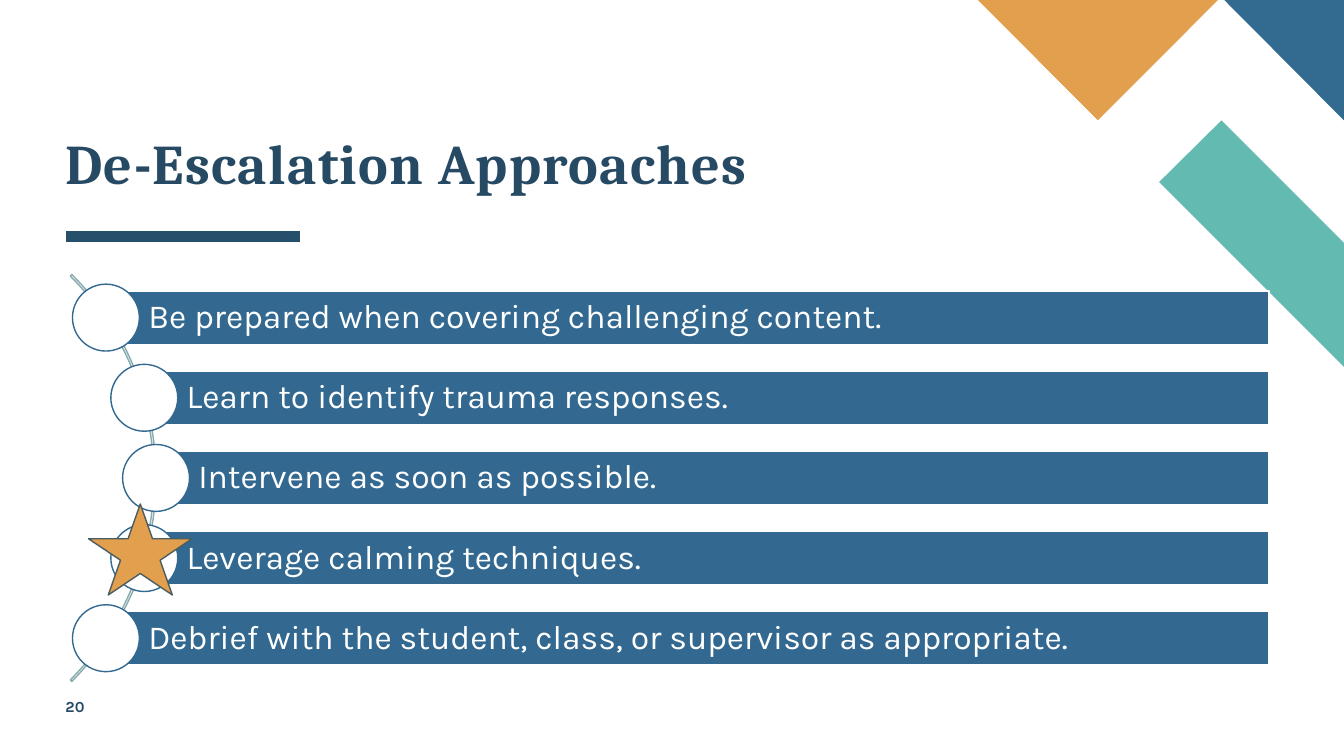
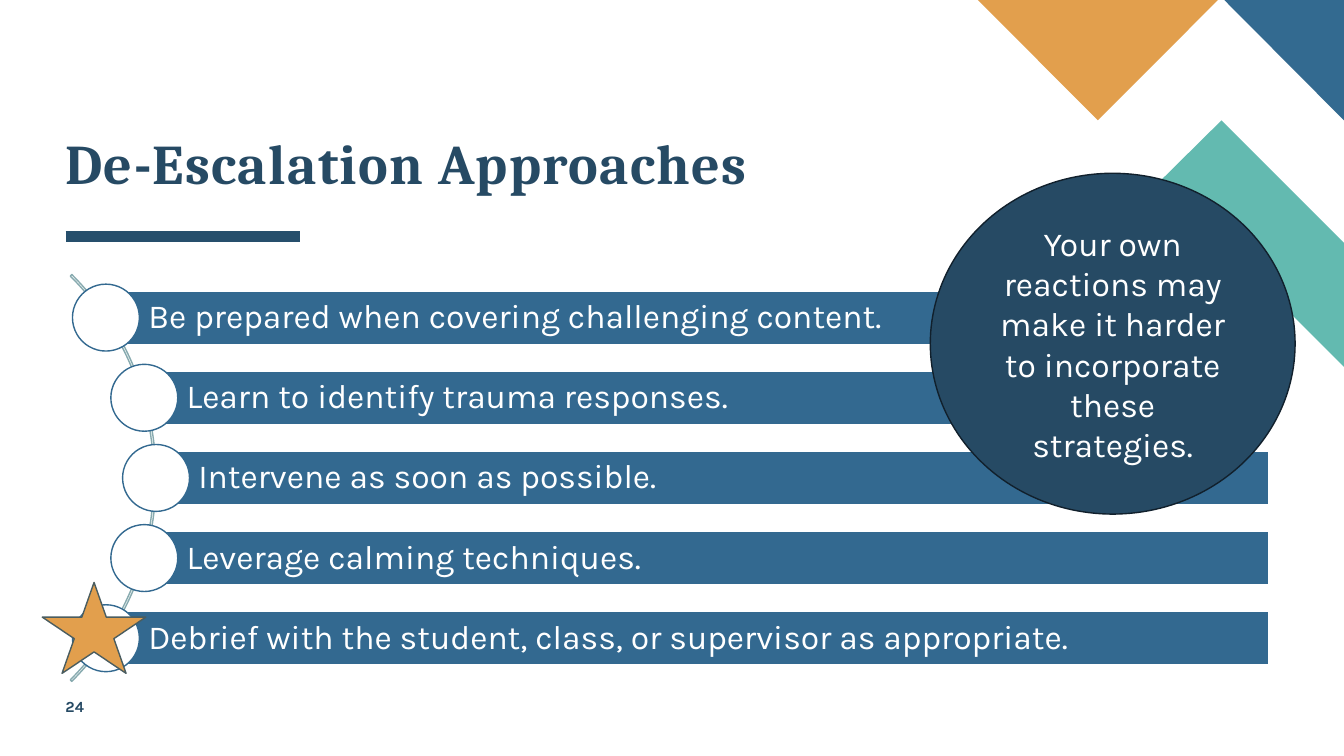
from lxml import etree
from pptx import Presentation
from pptx.dml.color import RGBColor
from pptx.enum.shapes import MSO_CONNECTOR, MSO_SHAPE
from pptx.enum.text import MSO_ANCHOR, MSO_AUTO_SIZE, PP_ALIGN
from pptx.oxml.ns import qn
from pptx.util import Pt

RECTANGLE, OVAL = MSO_SHAPE.RECTANGLE, MSO_SHAPE.OVAL
STAR, BLOCK_ARC = MSO_SHAPE.STAR_5_POINT, MSO_SHAPE.BLOCK_ARC
STRAIGHT = MSO_CONNECTOR.STRAIGHT
MIDDLE, BOTTOM = MSO_ANCHOR.MIDDLE, MSO_ANCHOR.BOTTOM
LEFT, CENTER = PP_ALIGN.LEFT, PP_ALIGN.CENTER

WHITE = RGBColor(0xFF, 0xFF, 0xFF)
NAVY = RGBColor(0x26, 0x4A, 0x64)
RULE_NAVY = RGBColor(0x26, 0x4F, 0x6C)
CALLOUT_EDGE = RGBColor(0x11, 0x20, 0x2C)
CORNER_BLUE = RGBColor(0x33, 0x6A, 0x90)
BAR_BLUE = RGBColor(0x33, 0x69, 0x90)
TEAL = RGBColor(0x63, 0xBA, 0xB0)
ORANGE = RGBColor(0xE2, 0x9F, 0x4D)
ARC_GREY = RGBColor(0x87, 0xAA, 0xAF)
STAR_EDGE = RGBColor(0x4A, 0x5D, 0x60)

TITLE_FONT, BODY_FONT = "Cambria", "Karla"
SLIDE_WIDTH, SLIDE_HEIGHT = 960, 540
MARGIN = 46.8

CORNER_SHAPES = [
    (TEAL, [(960, 262), (960, 173.5), (872.5, 86), (828, 130)]),
    (CORNER_BLUE, [(960, 86), (960, 0), (874.5, 0)]),
    (ORANGE, [(698.5, 0), (784.25, 86), (870, 0)]),
]

TITLE = "De-Escalation Approaches"
APPROACHES = [
    "Be prepared when covering challenging content.",
    "Learn to identify trauma responses.",
    "Intervene as soon as possible.",
    "Leverage calming techniques.",
    "Debrief with the student, class, or supervisor as appropriate.",
]
CALLOUT = "Your own reactions may make it harder to incorporate these strategies."

LIST_BOX = (51.8, 203, 854.7, 276.8)
ROW_INDENTS = [0, 27.4, 35.8, 27.4, 0]
DOT_SIZE = 47.8
BAR_HEIGHT = 38
ARC_SIZE = 411
ARC_THICKNESS = 1.55
STAR_SIZE = (74, 65)
CALLOUT_BOX = (664.5, 123.8, 260.6, 243.4)


def points(*values):
    return [Pt(value) for value in values]


def add_shape(slide, kind, box, fill, edge):
    shape = slide.shapes.add_shape(kind, *points(*box))
    shape.shadow.inherit = False
    if fill is None:
        shape.fill.background()
    else:
        shape.fill.solid()
        shape.fill.fore_color.rgb = fill
    shape.line.color.rgb = edge
    shape.line.width = Pt(1)
    return shape


def set_insets(frame, left, top, right, bottom):
    frame.margin_left, frame.margin_top = points(left, top)
    frame.margin_right, frame.margin_bottom = points(right, bottom)


def write_text(frame, text, size, color, font=BODY_FONT, bold=False, align=LEFT, spacing=1.0):
    frame.text = text
    paragraph = frame.paragraphs[0]
    paragraph.alignment = align
    paragraph.line_spacing = spacing
    paragraph.font.name = font
    paragraph.font.size = Pt(size)
    paragraph.font.bold = bold
    paragraph.font.color.rgb = color


def prepare_layout(layout):
    """Keep only the title placeholder and set its place and text frame."""
    for placeholder in list(layout.placeholders):
        if placeholder.placeholder_format.idx:
            layout.shapes.element.remove(placeholder.element)
    title = layout.placeholders[0]
    title.left, title.top, title.width, title.height = points(MARGIN, 15.8, 864, 123.8)
    frame = title.text_frame
    set_insets(frame, 0, 0, 0, 0)
    frame.vertical_anchor = BOTTOM
    frame.auto_size = MSO_AUTO_SIZE.NONE


def decorate_layout(slide):
    """Draw corner shapes and title rule, then hand them to the slide's layout."""
    decorations = []
    for color, corners in CORNER_SHAPES:
        start, *others = [points(*corner) for corner in corners]
        builder = slide.shapes.build_freeform(*start)
        builder.add_line_segments(others, close=True)
        shape = builder.convert_to_shape()
        shape.shadow.inherit = False
        shape.fill.solid()
        shape.fill.fore_color.rgb = color
        shape.line.fill.background()
        decorations.append(shape)
    rule = slide.shapes.add_connector(STRAIGHT, *points(MARGIN, 169.2, 214.6, 169.2))
    rule.line.color.rgb = RULE_NAVY
    rule.line.width = Pt(8)
    etree.SubElement(rule.element.spPr, qn("a:effectLst"))
    decorations.append(rule)
    for decoration in decorations:
        slide.slide_layout.shapes.element.append(decoration.element)


def add_title(slide):
    title = slide.shapes.title
    write_text(title.text_frame, TITLE, 40, NAVY, TITLE_FONT, bold=True, spacing=0.8)
    for properties in title.element.iter(qn("a:defRPr")):
        properties.set("spc", "100")


def add_approach_list(slide, box):
    left, top, width, height = box
    pitch = (height - DOT_SIZE) / (len(APPROACHES) - 1)
    arc_left = left + DOT_SIZE / 2 + max(ROW_INDENTS) - ARC_SIZE
    arc_top = top + (height - ARC_SIZE) / 2
    arc = add_shape(slide, BLOCK_ARC, (arc_left, arc_top, ARC_SIZE, ARC_SIZE), None, ARC_GREY)
    arc.adjustments[0] = 189
    arc.adjustments[1] = 27
    arc.adjustments[2] = ARC_THICKNESS / ARC_SIZE
    for row, (text, indent) in enumerate(zip(APPROACHES, ROW_INDENTS)):
        dot_left, dot_top = left + indent, top + row * pitch
        bar_left = dot_left + DOT_SIZE / 2
        bar_top = dot_top + (DOT_SIZE - BAR_HEIGHT) / 2
        bar_box = (bar_left, bar_top, left + width - bar_left, BAR_HEIGHT)
        bar = add_shape(slide, RECTANGLE, bar_box, BAR_BLUE, WHITE)
        frame = bar.text_frame
        set_insets(frame, 30.2, 5, 5, 5)
        frame.vertical_anchor = MIDDLE
        write_text(frame, text, 24, WHITE, spacing=0.9)
        add_shape(slide, OVAL, (dot_left, dot_top, DOT_SIZE, DOT_SIZE), WHITE, BAR_BLUE)


def add_callout(slide, box, text):
    callout = add_shape(slide, OVAL, box, NAVY, CALLOUT_EDGE)
    callout.text_frame.vertical_anchor = MIDDLE
    write_text(callout.text_frame, text, 24, WHITE, align=CENTER)


def add_page_number(slide, number):
    frame = slide.shapes.add_textbox(*points(MARGIN, 498.2, 41, 19.4)).text_frame
    frame.word_wrap = True
    set_insets(frame, 0, 0, 0, 0)
    write_text(frame, str(number), 11, NAVY, bold=True)


def fill_slide(slide, number, star_corner, callout=None):
    add_title(slide)
    add_approach_list(slide, LIST_BOX)
    if callout:
        add_callout(slide, CALLOUT_BOX, callout)
    add_page_number(slide, number)
    add_shape(slide, STAR, star_corner + STAR_SIZE, ORANGE, STAR_EDGE)


def main():
    presentation = Presentation()
    presentation.slide_width, presentation.slide_height = points(SLIDE_WIDTH, SLIDE_HEIGHT)
    layout = presentation.slide_layouts[5]
    prepare_layout(layout)
    calming_slide = presentation.slides.add_slide(layout)
    decorate_layout(calming_slide)
    fill_slide(calming_slide, 20, (63.2, 360))
    debrief_slide = presentation.slides.add_slide(layout)
    fill_slide(debrief_slide, 24, (30.2, 416), CALLOUT)
    presentation.save("out.pptx")


if __name__ == "__main__":
    main()
